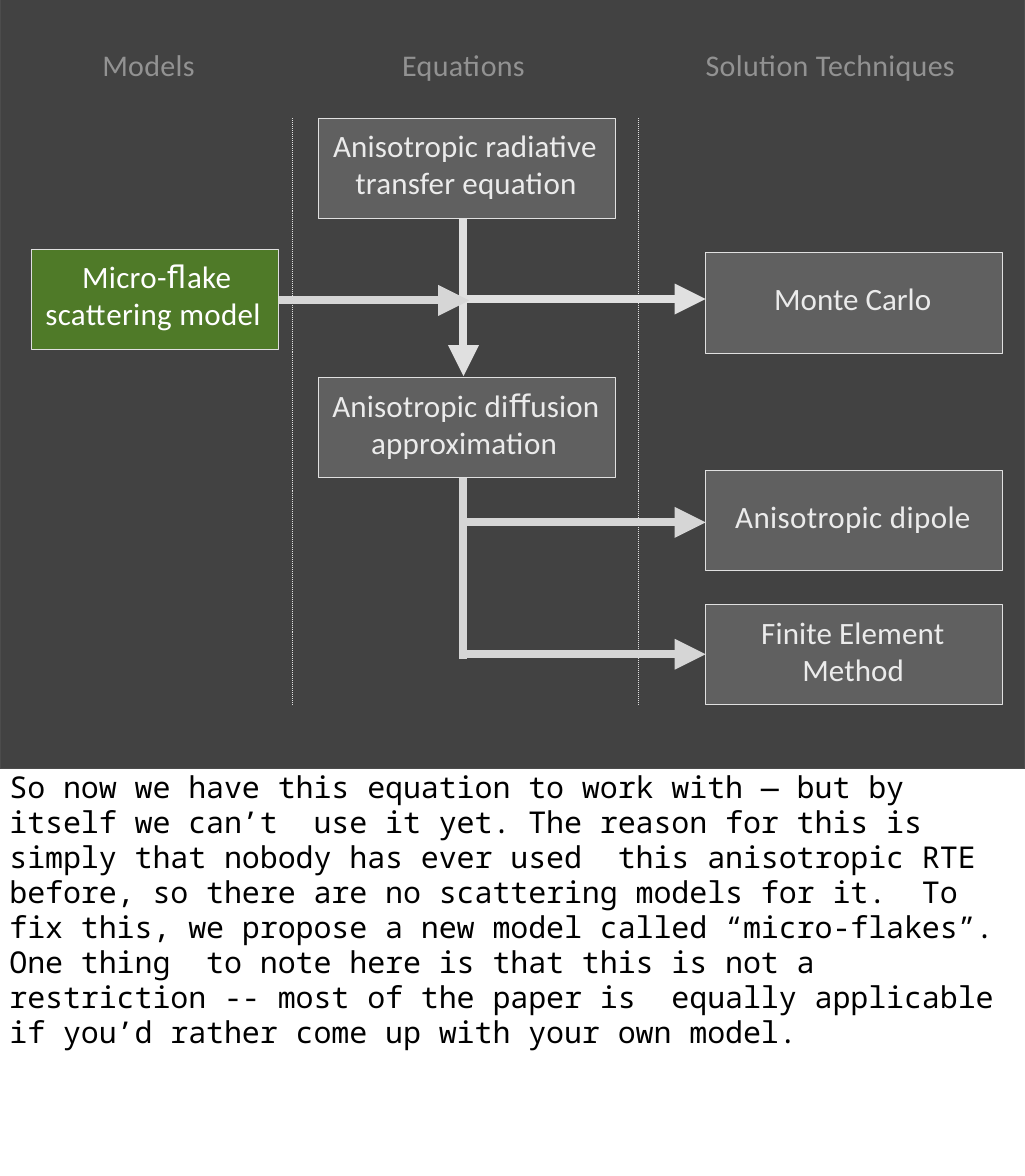
from itertools import cycle

from pptx import Presentation
from pptx.dml.color import RGBColor
from pptx.enum.dml import MSO_LINE
from pptx.enum.shapes import MSO_CONNECTOR, MSO_SHAPE
from pptx.enum.text import MSO_ANCHOR, PP_ALIGN
from pptx.oxml.ns import qn
from pptx.util import Inches, Pt

SLIDE_W, SLIDE_H = 14.22, 16.32
PANEL_H = 10.67
MODEL_X, EQUATION_X, SOLUTION_X = 0.44, 4.42, 9.79   # left edges of the columns
DIVIDERS = (4.06, 8.86)
SPINE_X = 6.43
BOX_W, MODEL_W, BOX_H = 4.12, 3.43, 1.39
TOP, BOTTOM = 1.64, 9.79
HEAD = 0.43

PANEL = RGBColor(0x42, 0x42, 0x42)
PANEL_EDGE = RGBColor(0x4C, 0x4C, 0x4C)
BOX = RGBColor(0x60, 0x60, 0x60)
GREEN = RGBColor(0x4F, 0x7A, 0x28)
LIGHT = RGBColor(0xE0, 0xE0, 0xE0)
GREY = RGBColor(0xD6, 0xD6, 0xD6)
HEADING = RGBColor(0x92, 0x92, 0x92)
BOX_TEXT = RGBColor(0xEB, 0xEB, 0xEB)
WHITE = RGBColor(0xFF, 0xFF, 0xFF)
BLACK = RGBColor(0, 0, 0)

NOTE = (
    "So now we have this equation to work with — but by itself we can’t  use it yet. "
    "The reason for this is simply that nobody has ever used  this anisotropic RTE "
    "before, so there are no scattering models for it.  To fix this, we propose a new "
    "model called “micro-flakes”. One thing  to note here is that this is not a "
    "restriction -- most of the paper is  equally applicable if you’d rather come up "
    "with your own model."
)


def write(shape, text, size=31, color=BOX_TEXT, font="Calibri", spacing=0.3,
          inset=0.0, left=0.0, first=0.0, leading=None):
    """Fill a shape with text; bars enclose ligatures set in DejaVu Sans."""
    tf = shape.text_frame
    tf.word_wrap = True
    tf.vertical_anchor = MSO_ANCHOR.TOP
    tf.margin_left = tf.margin_right = tf.margin_bottom = 0
    tf.margin_top = Inches(inset)
    p = tf.paragraphs[0]
    p.alignment = PP_ALIGN.LEFT
    if leading:
        p.line_spacing = Pt(leading)
    pPr = p._p.get_or_add_pPr()
    pPr.set("marL", str(Inches(left)))
    pPr.set("indent", str(Inches(first)))
    for i, line in enumerate(text.split("\n")):
        if i:
            p.add_line_break()
        for part, face in zip(line.split("|"), cycle((font, "DejaVu Sans"))):
            r = p.add_run()
            r.text = part
            r.font.name, r.font.size = face, Pt(size)
            r.font.color.rgb = color
            r._r.get_or_add_rPr().set("spc", str(round(spacing * 100)))


def add_rect(s, x, y, w, h, fill, edge):
    sp = s.shapes.add_shape(MSO_SHAPE.RECTANGLE, *map(Inches, (x, y, w, h)))
    sp.shadow.inherit = False
    sp.fill.solid()
    sp.fill.fore_color.rgb = fill
    sp.line.color.rgb = edge
    sp.line.width = Pt(1)
    return sp


def add_label(s, x, y, w, h, text, **fmt):
    write(s.shapes.add_textbox(*map(Inches, (x, y, w, h))), text, **fmt)


def add_line(s, x1, y1, x2, y2, color=GREY, width=8, dash=None):
    c = s.shapes.add_connector(MSO_CONNECTOR.STRAIGHT, *map(Inches, (x1, y1, x2, y2)))
    c.line.color.rgb = color
    c.line.width = Pt(width)
    if dash:
        c.line.dash_style = dash
    spPr = c._element.spPr
    spPr.append(spPr.makeelement(qn("a:effectLst"), {}))


def add_arrow(s, x1, y1, x2, y2, color=GREY):
    """Draw a horizontal or downward line with a solid triangular head."""
    half = HEAD / 2
    if y1 == y2:
        neck = (x2 - HEAD, y2)
        base = [(neck[0], y2 - half), (neck[0], y2 + half)]
    else:
        neck = (x2, y2 - HEAD)
        base = [(x2 - half, neck[1]), (x2 + half, neck[1])]
    add_line(s, x1, y1, *neck, color=color)
    points = [(Inches(x), Inches(y)) for x, y in base + [(x2, y2)]]
    fb = s.shapes.build_freeform(*points[0])
    fb.add_line_segments(points[1:])
    head = fb.convert_to_shape()
    head.shadow.inherit = False
    head.fill.solid()
    head.fill.fore_color.rgb = color
    head.line.fill.background()


def main():
    prs = Presentation()
    prs.slide_width, prs.slide_height = Inches(SLIDE_W), Inches(SLIDE_H)
    s = prs.slides.add_slide(prs.slide_layouts[6])
    add_rect(s, 0, 0, SLIDE_W, PANEL_H, PANEL, PANEL_EDGE)

    for x, w, text in ((1.41, 1.5, "Models"), (5.57, 1.9, "Equations"),
                       (9.78, 3.7, "Solution Techniques")):
        add_label(s, x, 0.64, w, 0.53, text, size=30, color=HEADING, inset=0.01, left=0.01)
    for x in DIVIDERS:
        add_line(s, x, TOP, x, BOTTOM, color=LIGHT, width=1, dash=MSO_LINE.ROUND_DOT)

    add_line(s, SPINE_X, 6.62, SPINE_X, 9.14)
    for y in (7.25, 9.08):
        add_arrow(s, SPINE_X, y, SOLUTION_X, y)
    add_arrow(s, SPINE_X, 3.03, SPINE_X, 5.22, color=LIGHT)
    add_arrow(s, SPINE_X, 4.15, SOLUTION_X, 4.15, color=LIGHT)
    add_arrow(s, MODEL_X + MODEL_W, 4.17, 6.51, 4.17)

    one_line = dict(inset=0.37)
    two_lines = dict(inset=0.12, leading=37)
    boxes = (
        (EQUATION_X, TOP, "Anisotropic radiative\ntransfer equation",
         dict(two_lines, left=0.51, first=-0.31, spacing=0.2)),
        (EQUATION_X, 5.24, "Anisotropic di|ﬀ|usion\napproximation",
         dict(two_lines, left=0.73, first=-0.54, spacing=0.2)),
        (SOLUTION_X, 3.51, "Monte Carlo", dict(one_line, left=0.95, spacing=0)),
        (SOLUTION_X, 6.53, "Anisotropic dipole", dict(one_line, left=0.41, spacing=0.4)),
        (SOLUTION_X, 8.39, "Finite Element\nMethod",
         dict(two_lines, left=1.34, first=-0.57, spacing=0.15)),
    )
    for x, y, text, fmt in boxes:
        write(add_rect(s, x, y, BOX_W, BOX_H, BOX, LIGHT), text, **fmt)
    model = add_rect(s, MODEL_X, 3.46, MODEL_W, BOX_H, GREEN, LIGHT)
    write(model, "Micro-|fl|ake\nscattering model", color=WHITE, left=0.19, first=0.51,
          **two_lines)

    add_label(s, 0.12, 10.64, 13.99, 2.96, NOTE, size=30, color=BLACK,
              font="Noto Sans Mono", spacing=-0.1, inset=0.04, left=0.01, leading=35)
    prs.save("out.pptx")


if __name__ == "__main__":
    main()
